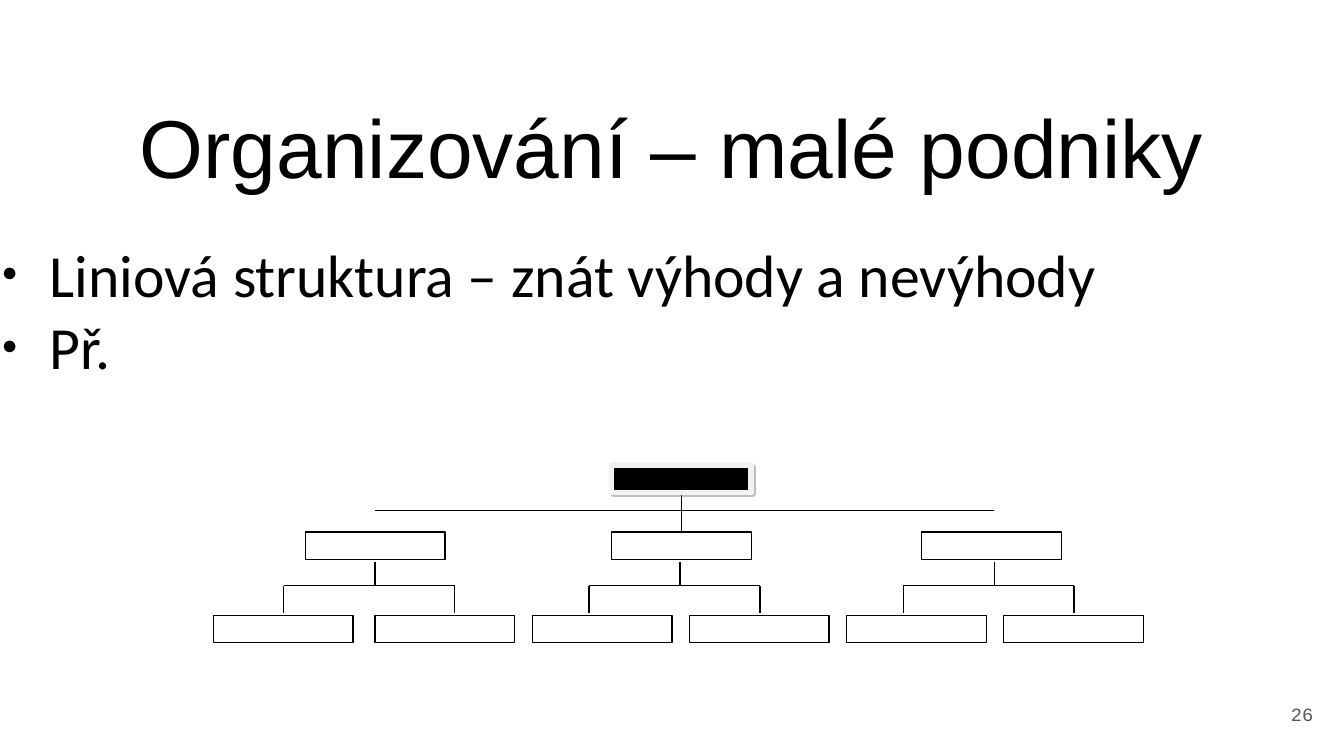
from lxml import etree
from pptx import Presentation
from pptx.dml.color import RGBColor
from pptx.enum.shapes import MSO_CONNECTOR, MSO_SHAPE
from pptx.enum.text import MSO_ANCHOR, MSO_AUTO_SIZE, PP_ALIGN
from pptx.oxml import parse_xml
from pptx.oxml.ns import qn
from pptx.util import Cm, Pt

RECT = MSO_SHAPE.RECTANGLE
LINE = MSO_CONNECTOR.STRAIGHT
MIDDLE = MSO_ANCHOR.MIDDLE
CENTER, RIGHT = PP_ALIGN.CENTER, PP_ALIGN.RIGHT
NS = 'xmlns:a="http://schemas.openxmlformats.org/drawingml/2006/main"'

WIDE = 25.4
BOX_W, BOX_H = 2.64, 0.52
TOP_Y, MID_Y, LOW_Y = 8.79, 10.06, 11.63
BAR_Y, FORK_Y = 9.65, 11.07
MID_X = (5.77, 11.56, 17.42)
LOW_X = (4.03, 7.09, 10.06, 13.03, 16.0, 18.97)
STEMS = (7.09, 12.85, 18.79)
ARMS = (5.36, 11.13, 17.07)
SPAN = 3.23


def color(code):
    return RGBColor.from_string(code)


def style(par, size, face, code):
    par.font.size = Pt(size)
    par.font.name = face
    par.font.color.rgb = color(code)


def place(shape, x, y, w, h):
    shape.left, shape.top = Cm(x), Cm(y)
    shape.width, shape.height = Cm(w), Cm(h)


def pad(frame, side, edge):
    frame.margin_left = frame.margin_right = Cm(side)
    frame.margin_top = frame.margin_bottom = Cm(edge)
    frame.word_wrap = True


def add_title(slide, text):
    title = slide.shapes.title
    place(title, 0, 1.83, WIDE, 1.85)
    frame = title.text_frame
    pad(frame, 0, 0)
    frame.auto_size = MSO_AUTO_SIZE.NONE
    frame.vertical_anchor = MIDDLE
    frame.text = text
    par = frame.paragraphs[0]
    par.alignment = CENTER
    style(par, 44, "Arial", "000000")


def add_bullet(par):
    props = par._p.get_or_add_pPr()
    props.set("marL", str(Cm(0.94)))
    props.set("indent", str(Cm(-0.91)))
    for xml in (
        f'<a:buClr {NS}><a:srgbClr val="000000"/></a:buClr>',
        f'<a:buSzPct {NS} val="45000"/>',
        f'<a:buFont {NS} typeface="Arial"/>',
        f'<a:buChar {NS} char="●"/>',
    ):
        props.append(parse_xml(xml))


def add_list(slide, items):
    box = slide.shapes.add_textbox(Cm(0), Cm(4.5), Cm(WIDE), Cm(7.8))
    frame = box.text_frame
    pad(frame, 0, 0.25)
    for i, item in enumerate(items):
        par = frame.add_paragraph() if i else frame.paragraphs[0]
        par.text = item
        add_bullet(par)
        par.line_spacing = 0.8
        par.space_before = Pt(8 if i else 0)
        style(par, 32, "Calibri", "000000")


def add_number(slide, text):
    box = slide.shapes.add_textbox(Cm(23.75), Cm(13.03), Cm(1.32), Cm(0.94))
    frame = box.text_frame
    pad(frame, 0.25, 0.25)
    frame.vertical_anchor = MIDDLE
    par = frame.paragraphs[0]
    par.text = text
    par.alignment = RIGHT
    style(par, 10, "Courier New", "585858")


def add_box(group, x, y, fill="FFFFFF", edge="000000", weight=0.75):
    box = group.shapes.add_shape(RECT, Cm(x), Cm(y), Cm(BOX_W), Cm(BOX_H))
    box.shadow.inherit = False
    box.fill.solid()
    box.fill.fore_color.rgb = color(fill)
    box.line.color.rgb = color(edge)
    box.line.width = Pt(weight)
    return box


def add_shadow(box):
    effects = box._element.spPr.find(qn("a:effectLst"))
    effects.append(parse_xml(
        f'<a:outerShdw {NS} blurRad="0" dist="{Pt(1.3)}" dir="2700000">'
        '<a:srgbClr val="7F7F7F"><a:alpha val="50000"/></a:srgbClr>'
        '</a:outerShdw>'))


def add_line(group, x1, y1, x2, y2):
    line = group.shapes.add_connector(LINE, Cm(x1), Cm(y1), Cm(x2), Cm(y2))
    line.line.color.rgb = color("000000")
    line.line.width = Pt(0.75)
    etree.SubElement(line._element.spPr, qn("a:effectLst"))


def add_fork(group, stem, left):
    """Join a middle box to the two boxes below it."""
    right = left + SPAN
    add_line(group, stem, 10.62, stem, FORK_Y)
    add_line(group, left, FORK_Y, right, FORK_Y)
    for x in (left, right):
        add_line(group, x, FORK_Y, x, 11.58)


def add_chart(slide):
    group = slide.shapes.add_group_shape()
    for x in LOW_X:
        add_box(group, x, LOW_Y)
    for x in MID_X:
        add_box(group, x, MID_Y)
    add_line(group, 12.88, 9.35, 12.88, MID_Y)
    add_line(group, STEMS[0], BAR_Y, STEMS[-1], BAR_Y)
    for stem, left in zip(STEMS, ARMS):
        add_fork(group, stem, left)
    add_shadow(add_box(group, MID_X[1], TOP_Y, "000000", "F2F2F2", 3))


def main():
    deck = Presentation()
    deck.slide_width, deck.slide_height = Cm(WIDE), Cm(14.29)
    slide = deck.slides.add_slide(deck.slide_layouts[5])
    add_title(slide, "Organizování – malé podniky")
    add_list(slide, ("Liniová struktura – znát výhody a nevýhody", "Př."))
    add_number(slide, "26")
    add_chart(slide)
    deck.save("out.pptx")


if __name__ == "__main__":
    main()
